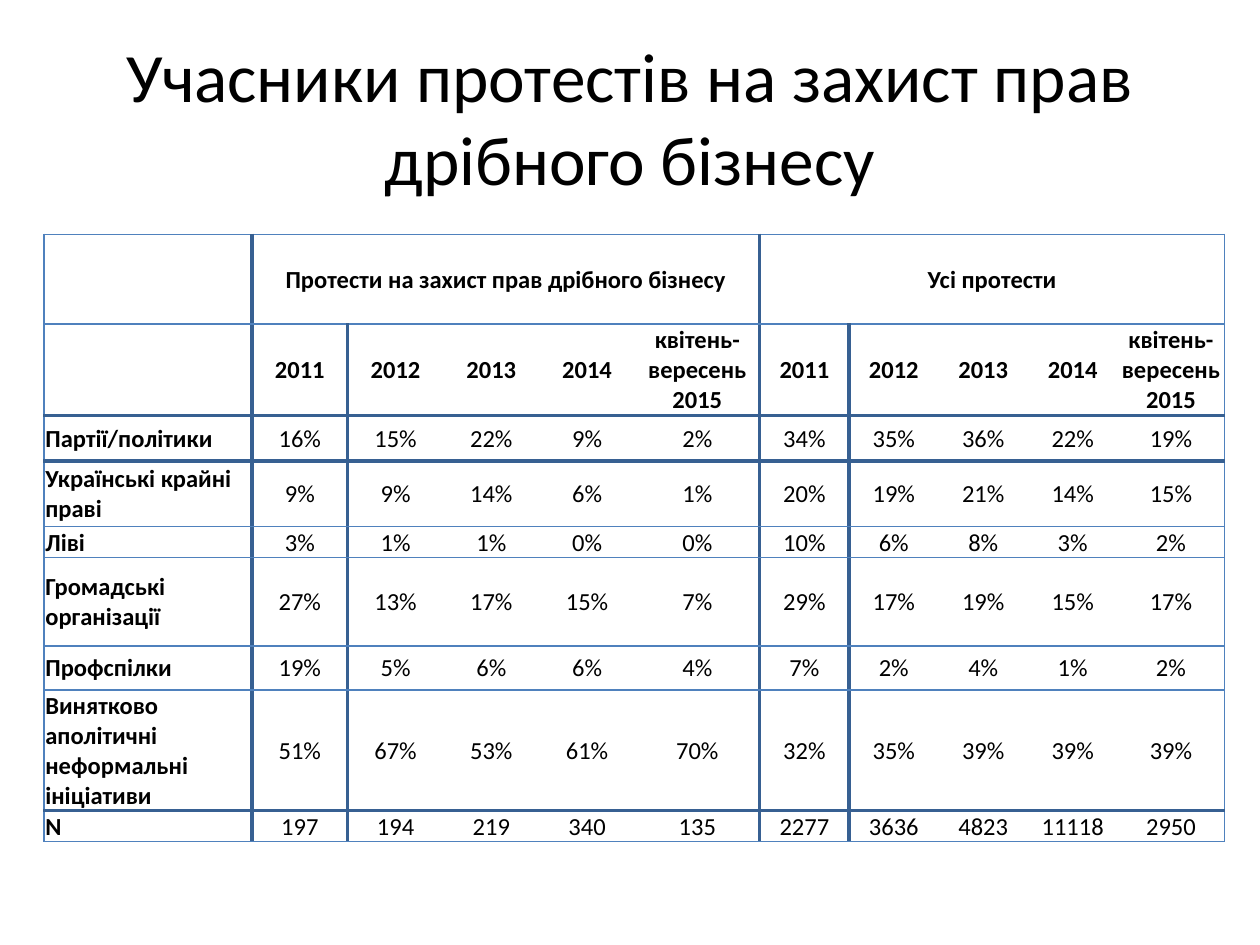
from lxml import etree
from pptx import Presentation
from pptx import util as u
from pptx.dml.color import RGBColor
from pptx.enum import text
from pptx.oxml import ns

COLORS = {"text": "000000", "cell": "FFFFFF", "thin": "4F81BD", "thick": "376092"}
WIDTHS = {"thin": 1, "thick": 2.25}
FONT = "Calibri"
NO_STYLE = "{2D5ABB26-0587-4C30-8999-92F81FD0307C}"

TITLE = "Учасники протестів на захист прав дрібного бізнесу"
GROUPS = ["Протести на захист прав дрібного бізнесу", "Усі протести"]
PERIODS = ["2011", "2012", "2013", "2014", "квітень-вересень 2015"]
SHARES = [
    ("Партії/політики", [16, 15, 22, 9, 2, 34, 35, 36, 22, 19]),
    ("Українські крайні праві", [9, 9, 14, 6, 1, 20, 19, 21, 14, 15]),
    ("Ліві", [3, 1, 1, 0, 0, 10, 6, 8, 3, 2]),
    ("Громадські організації", [27, 13, 17, 15, 7, 29, 17, 19, 15, 17]),
    ("Профспілки", [19, 5, 6, 6, 4, 7, 2, 4, 1, 2]),
    ("Винятково аполітичні неформальні ініціативи", [51, 67, 53, 61, 70, 32, 35, 39, 39, 39]),
]
TOTALS = ("N", [197, 194, 219, 340, 135, 2277, 3636, 4823, 11118, 2950])

COLUMN_WIDTHS = [1.65] + [0.76] * 4 + [0.99] + [0.71] * 4 + [0.85]
ROW_HEIGHTS = [0.71, 0.73, 0.36, 0.52, 0.17, 0.7, 0.35, 0.76, 0.19]
GROUP_COLUMNS = [1, 6]
HEADER_ROWS = 2
THICK_ROW_EDGES = {2, 3, 8}


def add_text(frame, words, size, bold, align):
    para = frame.paragraphs[0]
    para.alignment = align
    span = para.add_run()
    span.text = words
    span.font.name = FONT
    span.font.size = u.Pt(size)
    span.font.bold = bold
    span.font.color.rgb = RGBColor.from_string(COLORS["text"])


def column_edge(edge, row):
    if edge in (0, len(COLUMN_WIDTHS)):
        return "thin"
    if edge in GROUP_COLUMNS or (row > 0 and edge - 1 in GROUP_COLUMNS):
        return "thick"
    return None


def row_edge(edge):
    return "thick" if edge in THICK_ROW_EDGES else "thin"


def set_border(cell, side, kind):
    line = etree.SubElement(cell._tc.get_or_add_tcPr(), ns.qn("a:ln" + side))
    if kind is None:
        line.set("w", "0")
        etree.SubElement(line, ns.qn("a:noFill"))
        return
    line.set("w", str(u.Pt(WIDTHS[kind])))
    fill = etree.SubElement(line, ns.qn("a:solidFill"))
    etree.SubElement(fill, ns.qn("a:srgbClr")).set("val", COLORS[kind])


def format_cell(cell, row, column):
    cell.margin_left = cell.margin_top = cell.margin_right = u.Inches(0.01)
    cell.margin_bottom = 0
    cell.vertical_anchor = text.MSO_ANCHOR.MIDDLE
    right = column + (cell.span_width if cell.is_merge_origin else 1)
    set_border(cell, "L", column_edge(column, row))
    set_border(cell, "R", column_edge(right, row))
    set_border(cell, "T", row_edge(row))
    set_border(cell, "B", row_edge(row + 1))
    cell.fill.solid()
    cell.fill.fore_color.rgb = RGBColor.from_string(COLORS["cell"])


def table_rows():
    group_row = [""] * len(COLUMN_WIDTHS)
    for column, name in zip(GROUP_COLUMNS, GROUPS):
        group_row[column] = name
    shares = [[name] + [f"{value}%" for value in values] for name, values in SHARES]
    totals = [TOTALS[0]] + [str(value) for value in TOTALS[1]]
    return [group_row, [""] + PERIODS * len(GROUPS)] + shares + [totals]


def add_protest_table(page):
    frame = page.shapes.add_table(
        len(ROW_HEIGHTS), len(COLUMN_WIDTHS), u.Inches(0.35), u.Inches(1.86),
        u.Inches(sum(COLUMN_WIDTHS)), u.Inches(sum(ROW_HEIGHTS)))
    table = frame.table
    table.first_row = table.horz_banding = False
    table._tbl.tblPr.find(ns.qn("a:tableStyleId")).text = NO_STYLE
    for column, width in zip(table.columns, COLUMN_WIDTHS):
        column.width = u.Inches(width)
    for row, height in zip(table.rows, ROW_HEIGHTS):
        row.height = u.Inches(height)
    for column in GROUP_COLUMNS:
        table.cell(0, column).merge(table.cell(0, column + len(PERIODS) - 1))
    for row, entries in enumerate(table_rows()):
        for column, words in enumerate(entries):
            cell = table.cell(row, column)
            format_cell(cell, row, column)
            if words:
                align = text.PP_ALIGN.CENTER if column else text.PP_ALIGN.LEFT
                bold = row < HEADER_ROWS or column == 0
                add_text(cell.text_frame, words, 14, bold, align)


def main():
    deck = Presentation()
    deck.slide_width, deck.slide_height = u.Inches(10), u.Inches(7.5)
    page = deck.slides.add_slide(deck.slide_layouts[5])
    title = page.shapes.title
    title.left, title.top = u.Inches(0.5), u.Inches(0.3)
    title.width, title.height = u.Inches(9), u.Inches(1.25)
    title.text_frame.vertical_anchor = text.MSO_ANCHOR.MIDDLE
    add_text(title.text_frame, TITLE, 39.6, False, text.PP_ALIGN.CENTER)
    add_protest_table(page)
    deck.save("out.pptx")


if __name__ == "__main__":
    main()
